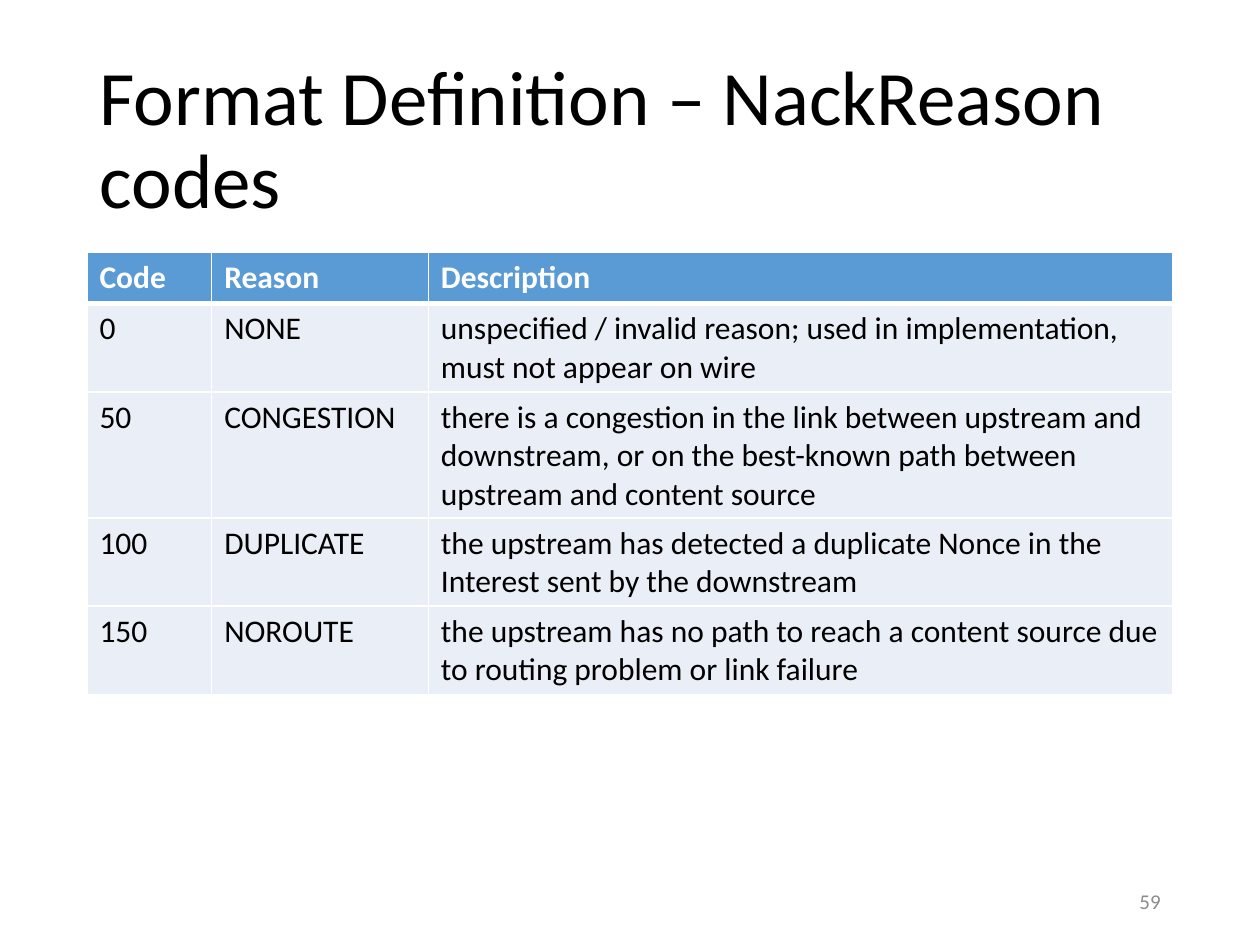
from pptx import Presentation
from pptx.dml.color import RGBColor
from pptx.enum.text import MSO_ANCHOR as Anchor, MSO_AUTO_SIZE as AutoSize, PP_ALIGN as Align
from pptx.oxml import parse_xml
from pptx.oxml.ns import nsdecls
from pptx.util import Inches, Pt

BLACK = RGBColor(0x00, 0x00, 0x00)
WHITE = RGBColor(0xFF, 0xFF, 0xFF)
GRAY = RGBColor(0x8C, 0x8C, 0x8C)
HEADER_BLUE = RGBColor(0x5B, 0x9B, 0xD5)
ROW_BLUE = RGBColor(0xEA, 0xEF, 0xF7)

LEFT = 0.69
COLUMN_WIDTHS = [0.99, 1.72, 5.91]
WIDTH = sum(COLUMN_WIDTHS)
ROW_HEIGHT = 0.41

NACK_REASONS = [
    ("Code", "Reason", "Description"),
    ("0", "NONE",
     "unspecified / invalid reason; used in implementation, must not appear on wire"),
    ("50", "CONGESTION",
     "there is a congestion in the link between upstream and downstream, "
     "or on the best-known path between upstream and content source"),
    ("100", "DUPLICATE",
     "the upstream has detected a duplicate Nonce in the Interest sent by the downstream"),
    ("150", "NOROUTE",
     "the upstream has no path to reach a content source due to routing problem or link failure"),
]


def write_text(frame, text, size=18, color=BLACK, bold=False,
               align=Align.LEFT, anchor=Anchor.TOP, line_spacing=None):
    frame.word_wrap = True
    frame.vertical_anchor = anchor
    paragraph = frame.paragraphs[0]
    paragraph.alignment = align
    paragraph.line_spacing = line_spacing
    run = paragraph.add_run()
    run.text = text
    run.font.name = "Calibri"
    run.font.size = Pt(size)
    run.font.bold = bold
    run.font.color.rgb = color


def set_borders(cell, **widths):
    properties = cell._tc.get_or_add_tcPr()
    for position, side in enumerate("LRTB"):
        properties.insert(position, parse_xml(
            f'<a:ln{side} {nsdecls("a")} w="{Pt(widths.get(side, 1))}">'
            f'<a:solidFill><a:srgbClr val="{WHITE}"/></a:solidFill></a:ln{side}>'))


def add_title(slide, text):
    title = slide.shapes.title
    title.left, title.top = Inches(LEFT), Inches(0.4)
    title.width, title.height = Inches(WIDTH), Inches(1.45)
    title.text_frame.auto_size = AutoSize.NONE
    write_text(title.text_frame, text, size=44, anchor=Anchor.MIDDLE, line_spacing=0.9)


def add_page_number(slide, number):
    page_number = slide.shapes.add_textbox(
        Inches(7.06), Inches(6.95), Inches(2.25), Inches(0.4))
    write_text(page_number.text_frame, number, size=12, color=GRAY,
               align=Align.RIGHT, anchor=Anchor.MIDDLE)


def add_reason_table(slide, records):
    reasons = slide.shapes.add_table(
        len(records), len(COLUMN_WIDTHS), Inches(LEFT), Inches(2),
        Inches(WIDTH), Inches(ROW_HEIGHT * len(records))).table
    reasons.horz_banding = False
    for column, width in zip(reasons.columns, COLUMN_WIDTHS):
        column.width = Inches(width)
    for row_index, record in enumerate(records):
        reasons.rows[row_index].height = Inches(ROW_HEIGHT)
        is_header = row_index == 0
        for column_index, text in enumerate(record):
            cell = reasons.cell(row_index, column_index)
            cell.fill.solid()
            cell.fill.fore_color.rgb = HEADER_BLUE if is_header else ROW_BLUE
            write_text(cell.text_frame, text, bold=is_header,
                       color=WHITE if is_header else BLACK)
            set_borders(cell, T=3 if row_index == 1 else 1, B=3 if is_header else 1)


def main():
    deck = Presentation()
    deck.slide_width, deck.slide_height = Inches(10), Inches(7.5)
    slide = deck.slides.add_slide(deck.slide_layouts.get_by_name("Title Only"))
    add_title(slide, "Format Definition – NackReason codes")
    add_page_number(slide, "59")
    add_reason_table(slide, NACK_REASONS)
    deck.save("out.pptx")


if __name__ == "__main__":
    main()
